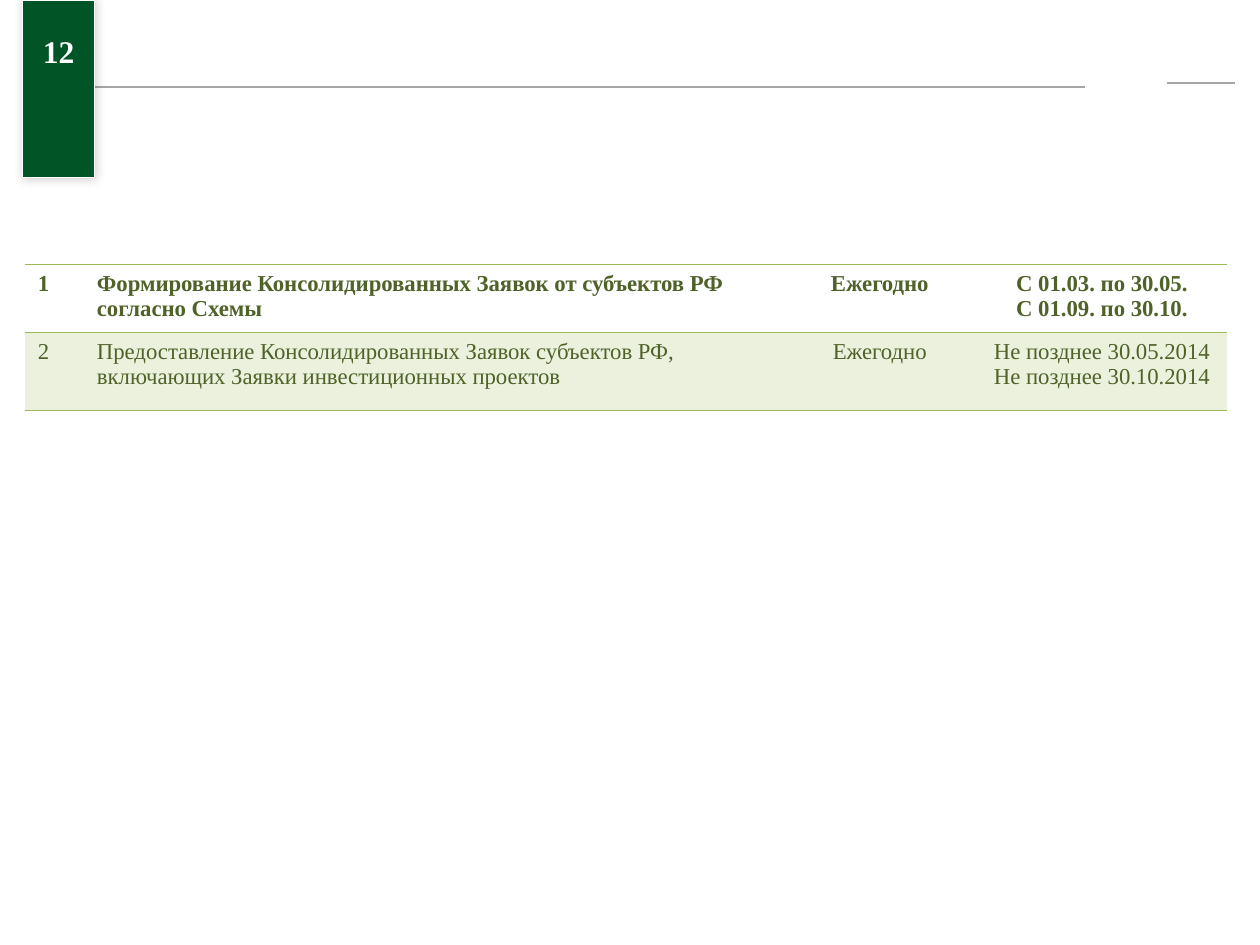
from lxml import etree
from pptx import Presentation
from pptx.dml.color import RGBColor
from pptx.enum.shapes import MSO_CONNECTOR
from pptx.enum.text import MSO_ANCHOR, MSO_AUTO_SIZE, PP_ALIGN
from pptx.oxml import parse_xml
from pptx.oxml.ns import nsdecls, qn
from pptx.util import Inches, Pt

LEFT, CENTER = PP_ALIGN.LEFT, PP_ALIGN.CENTER
MIDDLE = MSO_ANCHOR.MIDDLE
STRAIGHT = MSO_CONNECTOR.STRAIGHT
FONT = "Times New Roman"
WHITE = RGBColor(0xFF, 0xFF, 0xFF)
GREY = RGBColor(0xA6, 0xA6, 0xA6)
DARK_GREEN = RGBColor(0x00, 0x54, 0x26)
OLIVE = RGBColor(0x4F, 0x62, 0x28)
LIME = RGBColor(0x9B, 0xBB, 0x59)
PLAIN_TABLE_STYLE = "{2D5ABB26-0587-4C30-8999-92F81FD0307C}"

COLUMN_WIDTHS = [0.47, 5.59, 1.49, 1.99]
COLUMN_ALIGNS = [LEFT, LEFT, CENTER, CENTER]
ROW_HEIGHTS = [0.54, 0.62]
ROWS = [
    ["1", "Формирование Консолидированных Заявок от субъектов РФ согласно Схемы",
     "Ежегодно ", "С 01.03. по 30.05.\nС 01.09. по 30.10."],
    ["2", "Предоставление Консолидированных Заявок субъектов РФ, "
     "включающих Заявки инвестиционных проектов",
     "Ежегодно ", "Не позднее 30.05.2014\nНе позднее 30.10.2014"],
]


def write_text(frame, text, size, color, bold=False, align=LEFT):
    frame.text = text
    for para in frame.paragraphs:
        para.alignment = align
        for span in para.runs:
            span.font.name = FONT
            span.font.size = Pt(size)
            span.font.bold = bold
            span.font.color.rgb = color


def add_rule(page, left, right, top):
    rule = page.shapes.add_connector(
        STRAIGHT, Inches(left), Inches(top), Inches(right), Inches(top))
    rule.line.color.rgb = GREY
    rule.line.width = Pt(1)
    etree.SubElement(rule._element.spPr, qn("a:effectLst"))


def add_number_tab(page, left, top, width, height):
    """Turn the title into the green tab, with the number in its upper part."""
    tab = page.shapes.title
    tab.left, tab.top = Inches(left), Inches(top)
    tab.width, tab.height = Inches(width), Inches(height)
    tab.fill.solid()
    tab.fill.fore_color.rgb = DARK_GREEN
    tab.line.color.rgb = WHITE
    tab.line.width = Pt(0.75)
    tab._element.spPr.append(parse_xml(
        f'<a:effectLst {nsdecls("a")}>'
        f'<a:outerShdw blurRad="{Pt(6)}" dist="{Pt(1)}" dir="2700000">'
        '<a:srgbClr val="000000"><a:alpha val="20000"/></a:srgbClr>'
        '</a:outerShdw></a:effectLst>'))
    frame = tab.text_frame
    frame.auto_size = MSO_AUTO_SIZE.NONE
    frame.vertical_anchor = MIDDLE
    frame.margin_left = frame.margin_right = frame.margin_top = 0
    frame.margin_bottom = Inches(0.43 * height)
    write_text(frame, "12", size=18, color=WHITE, bold=True, align=CENTER)
    page.shapes._spTree.append(tab._element)


def set_border(cell, *sides):
    properties = cell._tc.get_or_add_tcPr()
    for index, side in enumerate(sides):
        properties.insert(index, parse_xml(
            f'<a:{side} {nsdecls("a")} w="{Pt(1)}"><a:solidFill>'
            f'<a:srgbClr val="{LIME}"/></a:solidFill></a:{side}>'))


def add_schedule(page, left, top):
    frame = page.shapes.add_table(
        len(ROWS), len(COLUMN_WIDTHS), Inches(left), Inches(top),
        Inches(sum(COLUMN_WIDTHS)), Inches(sum(ROW_HEIGHTS)))
    table = frame.table
    table.first_row = table.horz_banding = False
    table._tbl.tblPr.find(qn("a:tableStyleId")).text = PLAIN_TABLE_STYLE
    for column, width in zip(table.columns, COLUMN_WIDTHS):
        column.width = Inches(width)
    for number, (row, height) in enumerate(zip(table.rows, ROW_HEIGHTS)):
        row.height = Inches(height)
        first = number == 0
        for cell, text, align in zip(row.cells, ROWS[number], COLUMN_ALIGNS):
            write_text(cell.text_frame, text, size=13, color=OLIVE,
                       bold=first, align=align)
            if first:
                cell.fill.background()
                set_border(cell, "lnT", "lnB")
            else:
                cell.fill.solid()
                cell.fill.fore_color.rgb = LIME
                color = cell._tc.tcPr.find(".//" + qn("a:srgbClr"))
                etree.SubElement(color, qn("a:alpha"), val="20000")
                set_border(cell, "lnT", "lnB")


def main():
    deck = Presentation()
    deck.slide_width, deck.slide_height = Inches(10), Inches(7.5)
    page = deck.slides.add_slide(deck.slide_layouts[5])
    add_rule(page, left=0.2, right=8.61, top=0.69)
    add_rule(page, left=9.26, right=9.8, top=0.66)
    add_schedule(page, left=0.2, top=2.1)
    add_number_tab(page, left=0.18, top=0, width=0.57, height=1.41)
    deck.save("out.pptx")


if __name__ == "__main__":
    main()
